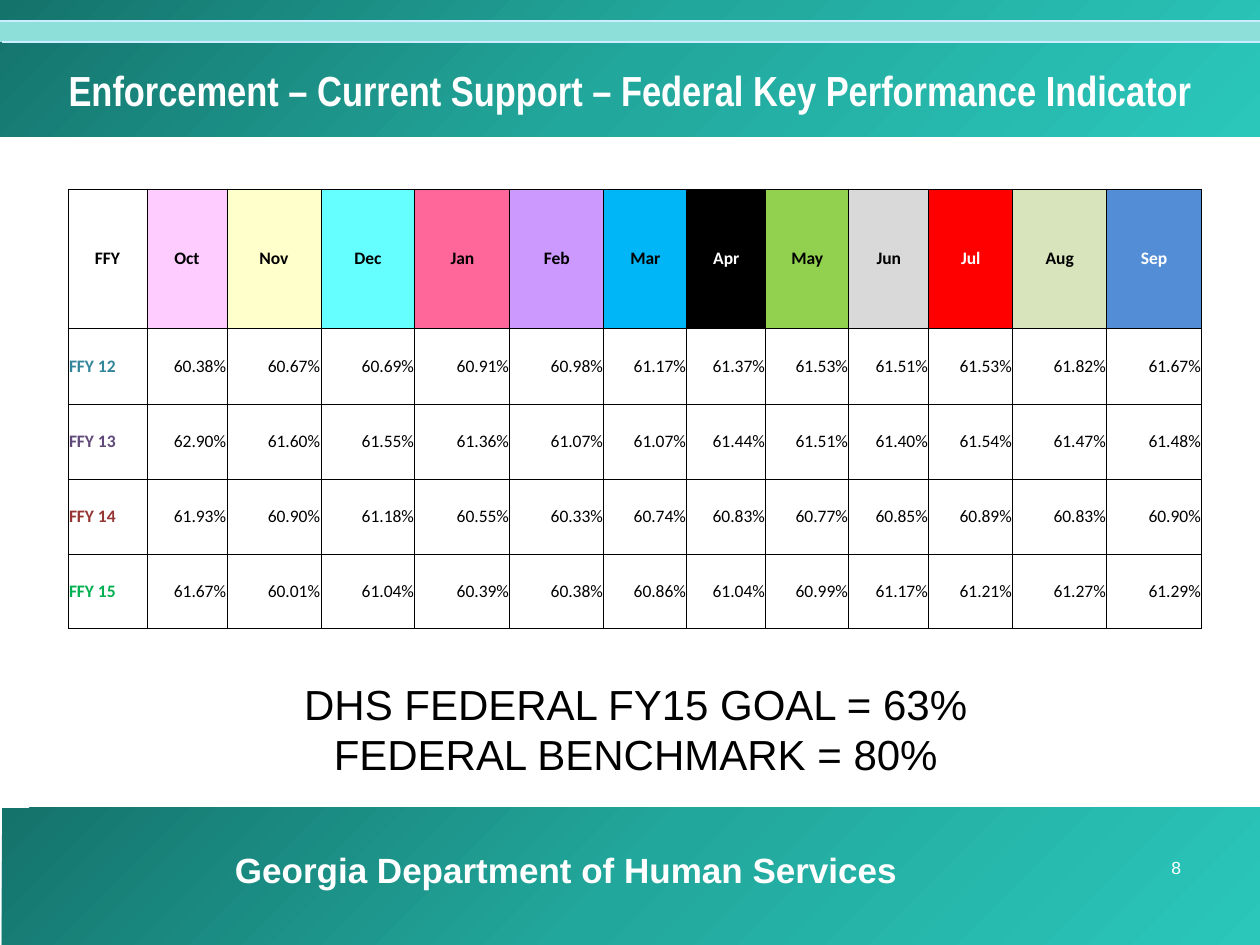
from typing import NamedTuple

from lxml.etree import SubElement
from pptx import Presentation
from pptx.dml.color import RGBColor
from pptx.enum.shapes import MSO_CONNECTOR, MSO_SHAPE
from pptx.enum.text import MSO_ANCHOR, PP_ALIGN
from pptx.oxml import parse_xml
from pptx.oxml.ns import nsdecls, qn
from pptx.util import Emu, Pt

PX = 914400 / 126

WHITE = RGBColor(0xFF, 0xFF, 0xFF)
BLACK = RGBColor(0x00, 0x00, 0x00)
STRIPE = RGBColor(0x8D, 0xDF, 0xD9)
RULE = RGBColor(0xCC, 0xEC, 0xFF)
TEAL_STOPS = (
    (0, RGBColor(0x14, 0x73, 0x6B)),
    (50, RGBColor(0x22, 0xA7, 0x9C)),
    (100, RGBColor(0x2B, 0xC7, 0xBB)),
)


class Box(NamedTuple):
    x: int
    y: int
    w: int
    h: int


class Label(NamedTuple):
    box: Box
    lines: tuple[str, ...]
    size: int
    color: RGBColor = WHITE
    bold: bool = False
    font: str = "Arial"
    align: PP_ALIGN = PP_ALIGN.CENTER
    anchor: MSO_ANCHOR = MSO_ANCHOR.TOP
    inset: int = 13


class Month(NamedTuple):
    name: str
    width: int
    fill: RGBColor
    color: RGBColor = BLACK


class Year(NamedTuple):
    name: str
    color: RGBColor
    height: int
    rates: tuple[float, ...]


BANDS = (Box(2, 808, 1260, 137), Box(0, 0, 1260, 137))
STRIPE_BOX = Box(0, 21, 1260, 21)
RULES = (Box(0, 21, 1260, 0), Box(2, 42, 1258, 0))

LABELS = (
    Label(Box(0, 42, 1260, 95),
          ("Enforcement – Current Support – Federal Key Performance Indicator",),
          24, bold=True, font="Arial Narrow", anchor=MSO_ANCHOR.MIDDLE),
    Label(Box(126, 842, 882, 55), ("Georgia Department of Human Services",),
          20, bold=True, align=PP_ALIGN.LEFT, inset=109),
    Label(Box(1134, 851, 84, 53), ("8",), 10),
    Label(Box(53, 672, 1165, 115),
          ("DHS FEDERAL FY15 GOAL = 63%", "FEDERAL BENCHMARK = 80%"), 24, BLACK),
)

TABLE_X, TABLE_Y = 68, 189
YEAR_WIDTH, HEADER_HEIGHT = 79, 139
MONTHS = (
    Month("Oct", 80, RGBColor(0xFF, 0xCC, 0xFF)),
    Month("Nov", 94, RGBColor(0xFF, 0xFF, 0xCC)),
    Month("Dec", 94, RGBColor(0x66, 0xFF, 0xFF)),
    Month("Jan", 95, RGBColor(0xFF, 0x66, 0x99)),
    Month("Feb", 94, RGBColor(0xCC, 0x99, 0xFF)),
    Month("Mar", 83, RGBColor(0x00, 0xB6, 0xF6)),
    Month("Apr", 79, BLACK, WHITE),
    Month("May", 83, RGBColor(0x92, 0xD0, 0x50)),
    Month("Jun", 80, RGBColor(0xD9, 0xD9, 0xD9)),
    Month("Jul", 84, RGBColor(0xFF, 0x00, 0x00), WHITE),
    Month("Aug", 94, RGBColor(0xD8, 0xE4, 0xBC)),
    Month("Sep", 95, RGBColor(0x53, 0x8D, 0xD5), WHITE),
)
YEARS = (
    Year("FFY 12", RGBColor(0x31, 0x86, 0x9B), 76,
         (60.38, 60.67, 60.69, 60.91, 60.98, 61.17,
          61.37, 61.53, 61.51, 61.53, 61.82, 61.67)),
    Year("FFY 13", RGBColor(0x60, 0x49, 0x7A), 75,
         (62.90, 61.60, 61.55, 61.36, 61.07, 61.07,
          61.44, 61.51, 61.40, 61.54, 61.47, 61.48)),
    Year("FFY 14", RGBColor(0x96, 0x36, 0x34), 75,
         (61.93, 60.90, 61.18, 60.55, 60.33, 60.74,
          60.83, 60.77, 60.85, 60.89, 60.83, 60.90)),
    Year("FFY 15", RGBColor(0x00, 0xB0, 0x50), 75,
         (61.67, 60.01, 61.04, 60.39, 60.38, 60.86,
          61.04, 60.99, 61.17, 61.21, 61.27, 61.29)),
)


def px(n: int) -> Emu:
    return Emu(round(n * PX))


def add_rect(s, box: Box):
    sp = s.shapes.add_shape(MSO_SHAPE.RECTANGLE, *map(px, box))
    sp.shadow.inherit = False
    sp.line.fill.background()
    return sp


def add_band(s, box: Box) -> None:
    sp = add_rect(s, box)
    stops = "".join(
        f'<a:gs pos="{pos * 1000}"><a:srgbClr val="{color}"/></a:gs>'
        for pos, color in TEAL_STOPS
    )
    grad = parse_xml(
        f'<a:gradFill {nsdecls("a")} rotWithShape="1"><a:gsLst>{stops}</a:gsLst>'
        '<a:lin ang="2700000" scaled="1"/></a:gradFill>'
    )
    sp._element.spPr.find(qn("a:prstGeom")).addnext(grad)


def add_rule(s, box: Box) -> None:
    x, y, w, h = box
    ln = s.shapes.add_connector(
        MSO_CONNECTOR.STRAIGHT, px(x), px(y), px(x + w), px(y + h))
    ln.line.color.rgb = RULE
    ln.line.width = Pt(1.5)
    SubElement(ln._element.spPr, qn("a:effectLst"))


def add_run(p, text: str, size: int, color: RGBColor, bold: bool, font: str) -> None:
    r = p.add_run()
    r.text = text
    r.font.size = Pt(size)
    r.font.color.rgb = color
    r.font.bold = bold
    r.font.name = font


def add_label(s, label: Label) -> None:
    tf = s.shapes.add_textbox(*map(px, label.box)).text_frame
    tf.word_wrap = True
    tf.vertical_anchor = label.anchor
    tf.margin_left = px(label.inset)
    for i, line in enumerate(label.lines):
        p = tf.add_paragraph() if i else tf.paragraphs[0]
        p.alignment = label.align
        add_run(p, line, label.size, label.color, label.bold, label.font)


def set_cell(cell, text: str, align: PP_ALIGN, color: RGBColor = BLACK,
             bold: bool = False, fill: RGBColor | None = None) -> None:
    cell.margin_left = cell.margin_right = cell.margin_top = px(1)
    cell.margin_bottom = 0
    cell.vertical_anchor = MSO_ANCHOR.MIDDLE
    p = cell.text_frame.paragraphs[0]
    p.alignment = align
    add_run(p, text, 10, color, bold, "Calibri")
    tc_pr = cell._tc.get_or_add_tcPr()
    for side in ("lnL", "lnR", "lnT", "lnB"):
        ln = SubElement(tc_pr, qn(f"a:{side}"), w=str(Pt(0.5)))
        SubElement(SubElement(ln, qn("a:solidFill")), qn("a:srgbClr"), val=str(BLACK))
    if fill is None:
        cell.fill.background()
    else:
        cell.fill.solid()
        cell.fill.fore_color.rgb = fill


def add_rates(s) -> None:
    widths = [YEAR_WIDTH, *(m.width for m in MONTHS)]
    heights = [HEADER_HEIGHT, *(y.height for y in YEARS)]
    box = Box(TABLE_X, TABLE_Y, sum(widths), sum(heights))
    table = s.shapes.add_table(len(heights), len(widths), *map(px, box)).table
    for col, width in zip(table.columns, widths):
        col.width = px(width)
    for row, height in zip(table.rows, heights):
        row.height = px(height)
    set_cell(table.cell(0, 0), "FFY", PP_ALIGN.CENTER, bold=True)
    for c, m in enumerate(MONTHS, 1):
        set_cell(table.cell(0, c), m.name, PP_ALIGN.CENTER, m.color, True, m.fill)
    for i, year in enumerate(YEARS, 1):
        set_cell(table.cell(i, 0), year.name, PP_ALIGN.LEFT, year.color, True)
        for c, rate in enumerate(year.rates, 1):
            set_cell(table.cell(i, c), f"{rate:.2f}%", PP_ALIGN.RIGHT)


def main() -> None:
    prs = Presentation()
    prs.slide_width, prs.slide_height = px(1260), px(945)
    s = prs.slides.add_slide(prs.slide_layouts[6])
    for band in BANDS:
        add_band(s, band)
    stripe = add_rect(s, STRIPE_BOX)
    stripe.fill.solid()
    stripe.fill.fore_color.rgb = STRIPE
    for rule in RULES:
        add_rule(s, rule)
    for label in LABELS:
        add_label(s, label)
    add_rates(s)
    prs.save("out.pptx")


if __name__ == "__main__":
    main()
